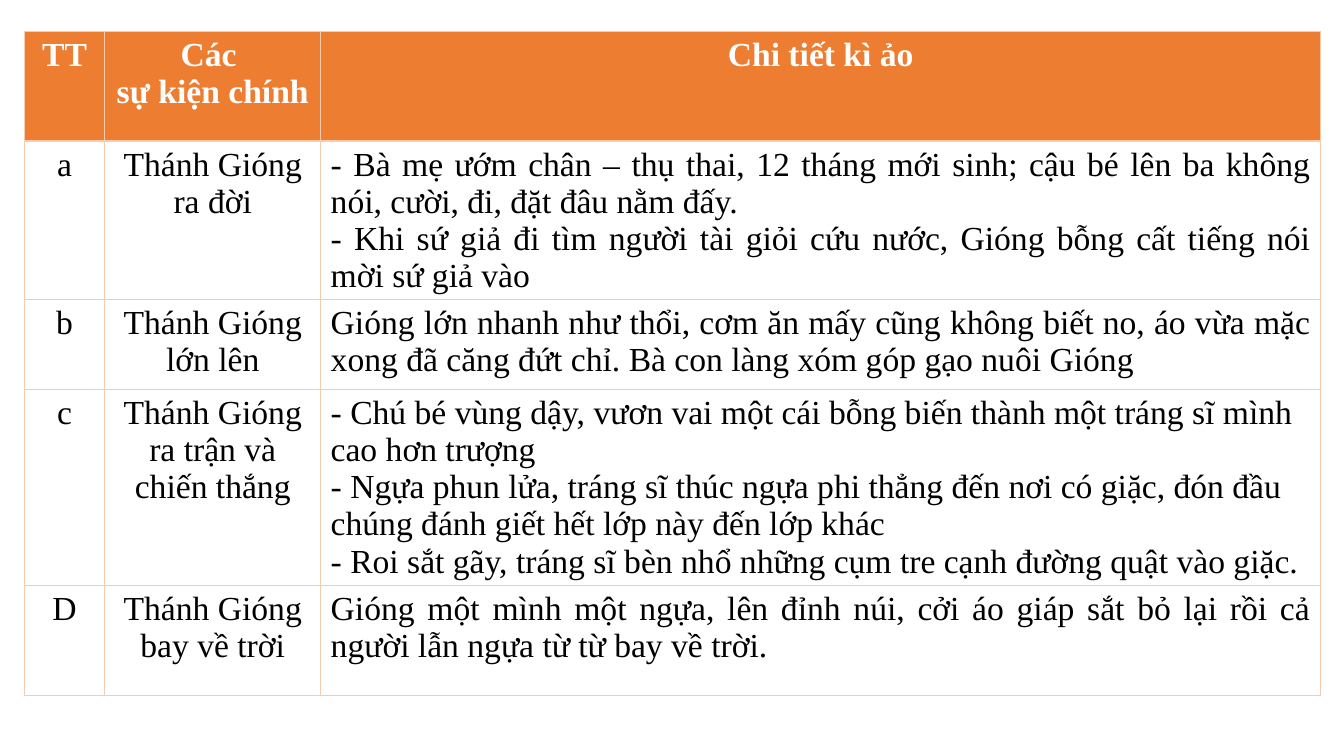
from lxml.etree import SubElement
from pptx import Presentation
from pptx.dml.color import RGBColor
from pptx.enum.text import PP_ALIGN
from pptx.oxml.ns import qn
from pptx.util import Inches, Pt

HEADER = ["TT", ["Các ", "sự kiện chính"], "Chi tiết kì ảo"]
EVENTS = [
    ("a", "Thánh Gióng ra đời", [
        "- Bà mẹ ướm chân – thụ thai, 12 tháng mới sinh; cậu bé lên ba không "
        "nói, cười, đi, đặt đâu nằm đấy.",
        "- Khi sứ giả đi tìm người tài giỏi cứu nước, Gióng bỗng cất tiếng nói "
        "mời sứ giả vào "], PP_ALIGN.JUSTIFY),
    ("b", "Thánh Gióng lớn lên", [
        "Gióng lớn nhanh như thổi, cơm ăn mấy cũng không biết no, áo vừa mặc "
        "xong đã căng đứt chỉ. Bà con làng xóm góp gạo nuôi Gióng "], PP_ALIGN.JUSTIFY),
    ("c", "Thánh Gióng ra trận và chiến thắng", [
        "- Chú bé vùng dậy, vươn vai một cái bỗng biến thành một tráng sĩ mình "
        "cao hơn trượng",
        "- Ngựa phun lửa, tráng sĩ thúc ngựa phi thẳng đến nơi có giặc, đón đầu "
        "chúng đánh giết hết lớp này đến lớp khác",
        "- Roi sắt gãy, tráng sĩ bèn nhổ những cụm tre cạnh đường quật vào giặc."],
     PP_ALIGN.LEFT),
    ("D", "Thánh Gióng bay về trời", [
        "Gióng một mình một ngựa, lên đỉnh núi, cởi áo giáp sắt bỏ lại rồi cả "
        "người lẫn ngựa từ từ bay về trời. "], PP_ALIGN.JUSTIFY),
]
COLUMN_WIDTHS = [0.8, 2.14, 9.92]
ROW_HEIGHTS = [1.09, 1.57, 0.89, 1.94, 1.09]


def color(hex_string):
    return RGBColor.from_string(hex_string)


class TableSlide:
    """Holds the text style and the slide that carries the events table."""

    font_name = "Times New Roman"
    font_size = Pt(24)
    border_color = "F8CBAD"

    def __init__(self, presentation):
        self.slide = presentation.slides.add_slide(presentation.slide_layouts[6])

    def add_table(self, left, top, widths, heights):
        shape = self.slide.shapes.add_table(
            len(heights), len(widths), Inches(left), Inches(top),
            Inches(sum(widths)), Inches(sum(heights)))
        table = shape.table
        for column, width in zip(table.columns, widths):
            column.width = Inches(width)
        for row, height in zip(table.rows, heights):
            row.height = Inches(height)
        return table

    def add_borders(self, cell):
        properties = cell._tc.get_or_add_tcPr()
        for side in ("a:lnL", "a:lnR", "a:lnT", "a:lnB"):
            line = SubElement(properties, qn(side), w=str(Pt(1)))
            fill = SubElement(line, qn("a:solidFill"))
            SubElement(fill, qn("a:srgbClr"), val=self.border_color)

    def fill_cell(self, cell, content, fill, text_color, bold, alignment):
        self.add_borders(cell)
        cell.fill.solid()
        cell.fill.fore_color.rgb = color(fill)
        lines = [content] if isinstance(content, str) else content
        frame = cell.text_frame
        for index, line in enumerate(lines):
            paragraph = frame.add_paragraph() if index else frame.paragraphs[0]
            paragraph.alignment = alignment
            run = paragraph.add_run()
            run.text = line
            run.font.name = self.font_name
            run.font.size = self.font_size
            run.font.bold = bold
            run.font.color.rgb = color(text_color)


def main():
    presentation = Presentation()
    presentation.slide_width = Inches(13.33)
    presentation.slide_height = Inches(7.5)
    events_slide = TableSlide(presentation)
    table = events_slide.add_table(0.24, 0.31, COLUMN_WIDTHS, ROW_HEIGHTS)

    for column, content in enumerate(HEADER):
        events_slide.fill_cell(table.cell(0, column), content,
                               "ED7D31", "FFFFFF", True, PP_ALIGN.CENTER)
    for row, (*contents, detail_alignment) in enumerate(EVENTS, start=1):
        alignments = [PP_ALIGN.CENTER, PP_ALIGN.CENTER, detail_alignment]
        for column, (content, alignment) in enumerate(zip(contents, alignments)):
            events_slide.fill_cell(table.cell(row, column), content,
                                   "FFFFFF", "000000", False, alignment)

    presentation.save("out.pptx")


if __name__ == "__main__":
    main()
